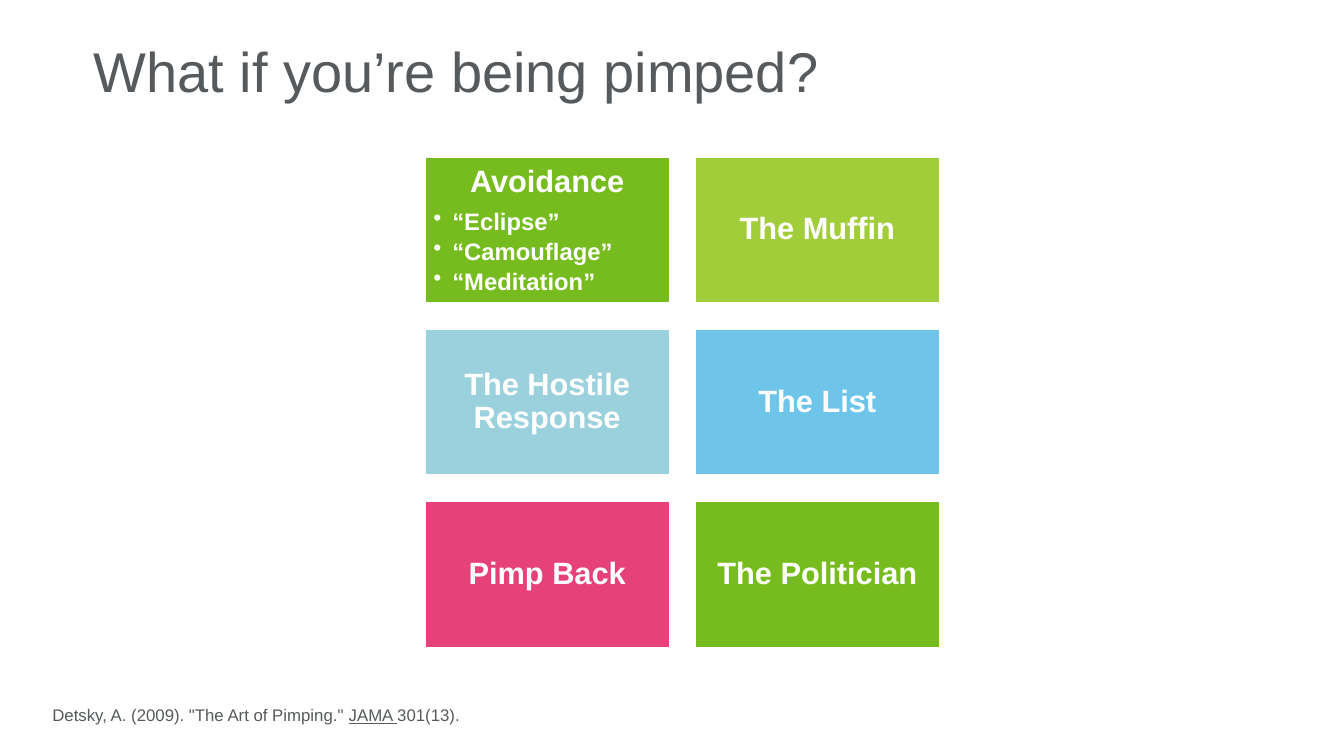
from lxml.etree import SubElement
from pptx import Presentation
from pptx.dml.color import RGBColor
from pptx.enum.shapes import MSO_SHAPE as Shape
from pptx.enum.text import MSO_ANCHOR as Anchor, PP_ALIGN as Align
from pptx.oxml.ns import qn
from pptx.util import Cm, Pt

# Content
TITLE = "What if you’re being pimped?"
CITATION = [  # text, underlined
    ('Detsky, A. (2009). "The Art of Pimping." ', False),
    ("JAMA ", True),
    ("301(13).", False),
]
CARDS = [  # heading, fill, bullets
    ("Avoidance", "77BC1F", ["“Eclipse”", "“Camouflage”", "“Meditation”"]),
    ("The Muffin", "A1CD3A", []),
    ("The Hostile Response", "9AD1DC", []),
    ("The List", "6EC4E9", []),
    ("Pimp Back", "E7417A", []),
    ("The Politician", "77BC1F", []),
]
GREY, WHITE, FONT = "565A5C", "FFFFFF", "Arial"

# Card grid, in cm
COLUMNS = 2
GRID_LEFT, GRID_TOP = 10.69, 3.94
CARD_WIDTH, CARD_HEIGHT = 6.2, 3.71
STEP_X, STEP_Y = 6.81, 4.34
CARD_INSET = 0.23
BULLET_INDENT = 0.48


def color(code):
    return RGBColor.from_string(code)


def add_span(para, text, size, code, bold=False, underline=False):
    span = para.add_run()
    span.text = text
    font = span.font
    font.name, font.size, font.bold = FONT, Pt(size), bold
    font.underline = underline
    font.color.rgb = color(code)


def add_box(page, left, top, width, height):
    box = page.shapes.add_textbox(Cm(left), Cm(top), Cm(width), Cm(height))
    box.text_frame.word_wrap = True
    return box.text_frame


def add_bullet(para):
    props = para._p.get_or_add_pPr()
    props.set("marL", str(Cm(BULLET_INDENT)))
    props.set("indent", str(-Cm(BULLET_INDENT)))
    SubElement(props, qn("a:buChar"), char="•")


def add_card(page, left, top, heading, fill, bullets):
    card = page.shapes.add_shape(
        Shape.RECTANGLE, Cm(left), Cm(top), Cm(CARD_WIDTH), Cm(CARD_HEIGHT))
    card.shadow.inherit = False
    card.fill.solid()
    card.fill.fore_color.rgb = color(fill)
    card.line.color.rgb = color(WHITE)
    card.line.width = Pt(2)

    frame = card.text_frame
    frame.word_wrap = True
    frame.vertical_anchor = Anchor.TOP if bullets else Anchor.MIDDLE
    frame.margin_left = frame.margin_right = Cm(CARD_INSET)
    frame.margin_top = frame.margin_bottom = Cm(CARD_INSET)

    para = frame.paragraphs[0]
    para.alignment = Align.CENTER
    para.line_spacing = 0.9
    para.space_after = Pt(8)
    add_span(para, heading, 22, WHITE, bold=True)
    for bullet in bullets:
        para = frame.add_paragraph()
        para.alignment = Align.LEFT
        para.level = 1
        para.line_spacing = 0.9
        para.space_after = Pt(3)
        add_bullet(para)
        add_span(para, bullet, 17, WHITE, bold=True)


def main():
    deck = Presentation()
    deck.slide_width, deck.slide_height = Cm(33.87), Cm(19.05)
    page = deck.slides.add_slide(deck.slide_layouts[6])

    # Title
    para = add_box(page, 2.11, 0.99, 22.86, 4.45).paragraphs[0]
    para.line_spacing = 0.9
    add_span(para, TITLE, 40, GREY)

    # Citation
    para = add_box(page, 1.07, 17.63, 17.3, 1.8).paragraphs[0]
    for text, underline in CITATION:
        add_span(para, text, 12, GREY, underline=underline)

    # Cards
    for index, card in enumerate(CARDS):
        row, column = divmod(index, COLUMNS)
        add_card(page, GRID_LEFT + column * STEP_X, GRID_TOP + row * STEP_Y, *card)

    deck.save("out.pptx")


if __name__ == "__main__":
    main()
